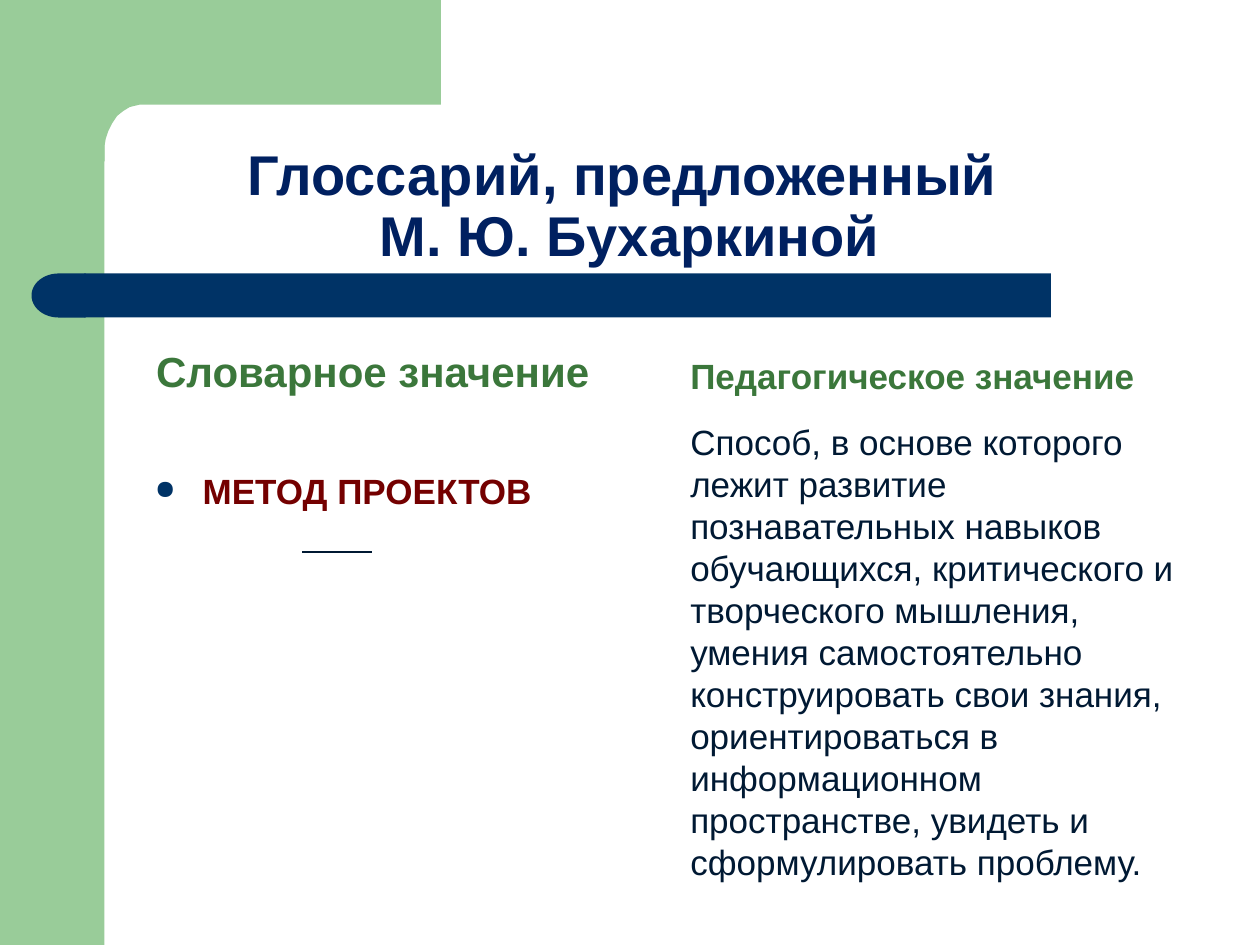
from lxml import etree
from pptx import Presentation
from pptx.dml.color import RGBColor
from pptx.enum import shapes, text
from pptx.oxml import ns
from pptx.util import Inches, Pt

GREEN = RGBColor(0x99, 0xCC, 0x99)
BAR_BLUE = RGBColor(0x00, 0x33, 0x66)
TITLE_BLUE = RGBColor(0x00, 0x20, 0x60)
HEADING_GREEN = RGBColor(0x3B, 0x77, 0x3B)
TERM_RED = RGBColor(0x74, 0x00, 0x00)
INK = RGBColor(0x00, 0x19, 0x33)


class GlossarySlide:
    font = "Arial"

    def __init__(self, presentation):
        self.slide = presentation.slides.add_slide(presentation.slide_layouts[5])
        self.shapes = self.slide.shapes

    def paint(self, shape, color):
        shape.shadow.inherit = False
        shape.fill.solid()
        shape.fill.fore_color.rgb = color
        shape.line.fill.background()

    def block(self, kind, box, color):
        shape = self.shapes.add_shape(kind, *map(Inches, box))
        self.paint(shape, color)
        return shape

    def outline(self, points, color):
        builder = self.shapes.build_freeform(
            Inches(points[0][0]), Inches(points[0][1]), scale=1.0)
        builder.add_line_segments(
            [(Inches(x), Inches(y)) for x, y in points[1:]], close=True)
        self.paint(builder.convert_to_shape(), color)

    def set_words(self, shape, words, size, color, bold, anchor):
        frame = shape.text_frame
        frame.text = words
        frame.word_wrap = True
        frame.auto_size = text.MSO_AUTO_SIZE.NONE
        frame.vertical_anchor = anchor
        paragraph = frame.paragraphs[0]
        for run in paragraph.runs:
            run.font.name = self.font
            run.font.size = Pt(size)
            run.font.bold = bold
            run.font.color.rgb = color
        return paragraph

    def title(self, words, box):
        title = self.shapes.title
        title.left, title.top, title.width, title.height = map(Inches, box)
        paragraph = self.set_words(title, words, 32, TITLE_BLUE, True,
                                   text.MSO_ANCHOR.BOTTOM)
        paragraph.alignment = text.PP_ALIGN.CENTER
        paragraph.line_spacing = 0.9

    def label(self, words, box, size, color, bold=True,
              anchor=text.MSO_ANCHOR.TOP):
        shape = self.shapes.add_textbox(*map(Inches, box))
        return self.set_words(shape, words, size, color, bold, anchor)

    def heading(self, words, box, size):
        self.label(words, box, size, HEADING_GREEN, anchor=text.MSO_ANCHOR.BOTTOM)

    def bullet(self, words, box, size, color):
        paragraph = self.label(words, box, size, color)
        properties = paragraph._p.get_or_add_pPr()
        indent = Inches(0.38)
        properties.set("marL", str(indent))
        properties.set("indent", str(-indent))
        bullet_color = etree.SubElement(properties, ns.qn("a:buClr"))
        etree.SubElement(bullet_color, ns.qn("a:srgbClr"), val=str(BAR_BLUE))
        etree.SubElement(properties, ns.qn("a:buSzPct"), val="75000")
        etree.SubElement(properties, ns.qn("a:buChar"), char="●")

    def rule(self, start, end, color, width):
        line = self.shapes.add_connector(
            shapes.MSO_CONNECTOR.STRAIGHT, *map(Inches, start + end))
        line.line.color.rgb = color
        line.line.width = Pt(width)
        etree.SubElement(line._element.spPr, ns.qn("a:effectLst"))


def main():
    presentation = Presentation()
    presentation.slide_width = Inches(10)
    presentation.slide_height = Inches(7.5)
    page = GlossarySlide(presentation)
    preset = shapes.MSO_SHAPE

    page.block(preset.RECTANGLE, (0, 0, 0.83, 7.5), GREEN)
    page.outline([
        (3.5, 0), (3.5, 0.83), (1.11, 0.83), (1.03, 0.85), (0.98, 0.88),
        (0.93, 0.92), (0.89, 0.98), (0.86, 1.04), (0.84, 1.1), (0.83, 1.16),
        (0.83, 1.28), (0.5, 1.28), (0.5, 0)], GREEN)
    page.block(preset.RECTANGLE, (0.67, 2.17, 7.67, 0.35), BAR_BLUE)
    bar_cap = page.block(preset.FLOWCHART_DELAY, (0.25, 2.17, 0.43, 0.35), BAR_BLUE)
    bar_cap.rotation = 180

    page.title("Глоссарий, предложенный \vМ. Ю. Бухаркиной", (0.5, 0.93, 9, 1.25))
    page.heading("Словарное значение", (1.14, 2.49, 4.42, 0.7), 24)
    page.bullet("МЕТОД ПРОЕКТОВ", (1.13, 3.68, 4.42, 4.32), 20, TERM_RED)
    page.heading("Педагогическое значение", (5.38, 2.5, 4.42, 0.7), 20)
    page.label(
        "Способ, в основе которого лежит развитие познавательных навыков "
        "обучающихся, критического и творческого мышления, умения "
        "самостоятельно конструировать свои знания, ориентироваться в "
        "информационном пространстве, увидеть и сформулировать проблему.",
        (5.38, 3.29, 4.18, 4.32), 20, INK, bold=False)
    page.rule((2.4, 4.38), (2.95, 4.38), INK, 0.75)

    presentation.save("out.pptx")


if __name__ == "__main__":
    main()
